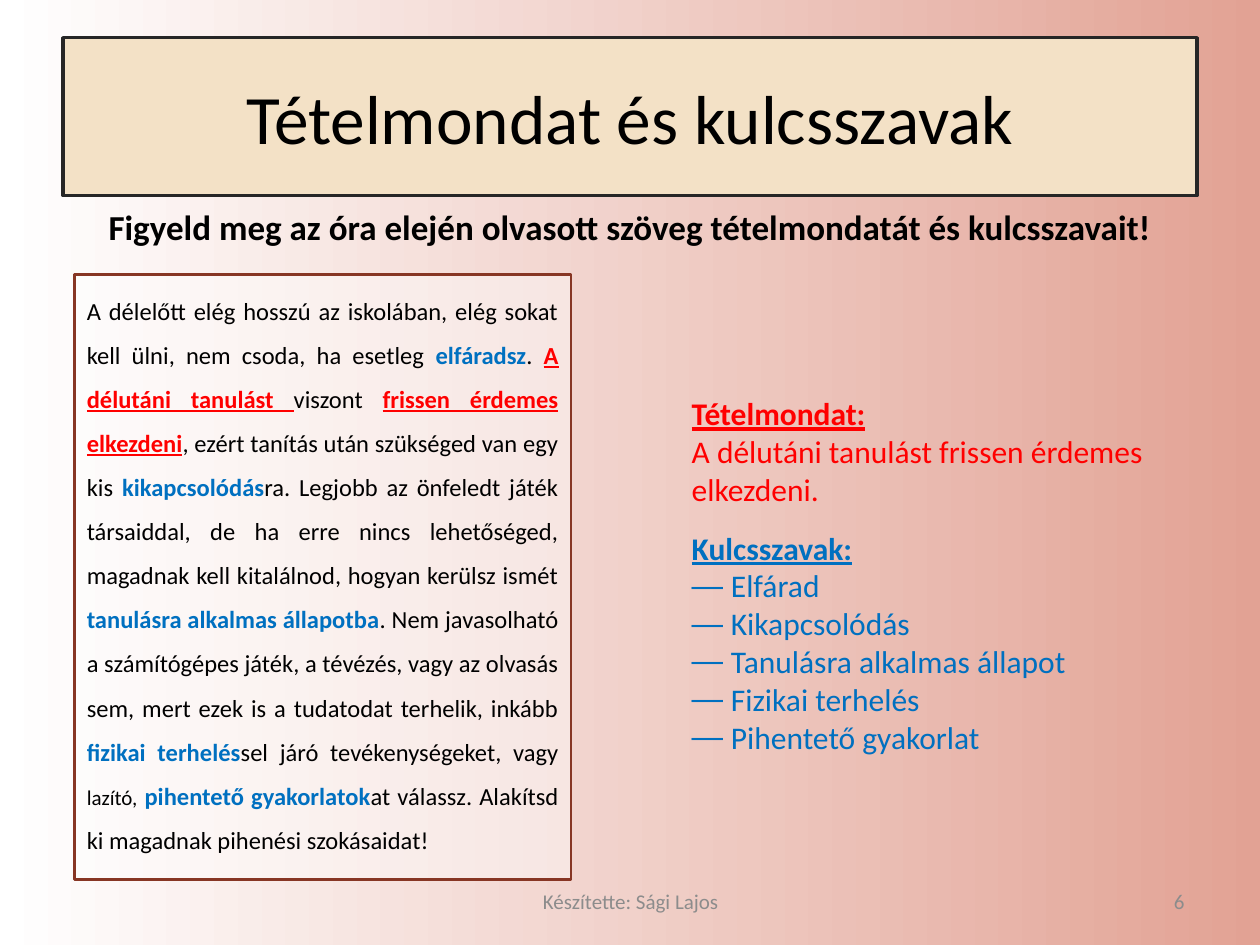
from dataclasses import dataclass

from lxml import etree
from pptx import Presentation
from pptx.dml.color import RGBColor
from pptx.enum.shapes import MSO_SHAPE
from pptx.enum.text import MSO_ANCHOR, MSO_AUTO_SIZE, PP_ALIGN
from pptx.oxml.ns import qn
from pptx.util import Cm, Pt

LEFT, MID, RIGHT, FULL = PP_ALIGN.LEFT, PP_ALIGN.CENTER, PP_ALIGN.RIGHT, PP_ALIGN.JUSTIFY
TOP, CENTRE = MSO_ANCHOR.TOP, MSO_ANCHOR.MIDDLE
FIXED = MSO_AUTO_SIZE.NONE
RECT = MSO_SHAPE.RECTANGLE


@dataclass(frozen=True)
class Theme:
    font: str = "Calibri"
    black: str = "000000"
    white: str = "FFFFFF"
    rose: str = "E2A294"
    sand: str = "F3E1C6"
    dark: str = "262626"
    brown: str = "873624"
    red: str = "FF0000"
    blue: str = "0070C0"
    grey: str = "8C8C8C"
    title: float = 39.6
    lead: int = 20
    list: int = 18
    text: int = 14
    small: int = 12


T = Theme()


def frame(shape, box, anchor=TOP):
    """Move the shape to box (cm) and return its first paragraph."""
    shape.left, shape.top, shape.width, shape.height = map(Cm, box)
    body = shape.text_frame
    body.word_wrap, body.auto_size, body.vertical_anchor = True, FIXED, anchor
    return body.paragraphs[0]


def write(para, text, size=T.text, color=T.black, bold=False, line=False, align=LEFT):
    para.alignment = align
    run = para.add_run()
    run.text = text
    font = run.font
    font.name, font.size, font.bold, font.underline = T.font, Pt(size), bold, line
    font.color.rgb = RGBColor.from_string(color)


deck = Presentation()
deck.slide_width, deck.slide_height = Cm(25.4), Cm(19.05)
slide = deck.slides.add_slide(deck.slide_layouts[1])
shapes = slide.shapes

# Background
back = slide.background.fill
back.gradient()
back.gradient_angle = 0
for stop, tone in zip(back.gradient_stops, (T.white, T.rose)):
    stop.color.rgb = RGBColor.from_string(tone)

# Title
title = shapes.title
title.fill.solid()
title.fill.fore_color.rgb = RGBColor.from_string(T.sand)
title.line.color.rgb = RGBColor.from_string(T.dark)
title.line.width = Pt(2)
para = frame(title, (1.27, 0.76, 22.86, 3.18), CENTRE)
write(para, "Tételmondat és kulcsszavak", size=T.title, align=MID)

# Task and footer
labels = [
    ("Figyeld meg az óra elején olvasott szöveg tételmondatát és kulcsszavait!",
     (1.9, 4.01, 21.59, 1.12), TOP, dict(size=T.lead, bold=True, align=MID)),
    ("Készítette: Sági Lajos", (8.69, 17.65, 8.05, 1.02), CENTRE,
     dict(size=T.small, color=T.grey, align=MID)),
    ("6", (18.21, 17.65, 5.92, 1.02), CENTRE,
     dict(size=T.small, color=T.grey, align=RIGHT)),
]
for text, box, anchor, style in labels:
    para = frame(shapes.add_textbox(0, 0, 0, 0), box, anchor)
    write(para, text, **style)

# Passage with its topic sentence and key words marked
panel = shapes.add_shape(RECT, 0, 0, 0, 0)
panel.shadow.inherit = False
panel.fill.solid()
panel.fill.fore_color.rgb = RGBColor.from_string(T.white)
tint = panel.fill._xPr.find(qn("a:solidFill"))[0]
etree.SubElement(tint, qn("a:alpha")).set("val", "40000")
panel.line.color.rgb = RGBColor.from_string(T.brown)
panel.line.width = Pt(1.5)

plain = {}
topic = dict(color=T.red, bold=True, line=True)
key = dict(color=T.blue, bold=True)
small = dict(size=T.small)
parts = [
    ("A délelőtt elég hosszú az iskolában, elég sokat kell ülni, nem csoda, "
     "ha esetleg ", plain),
    ("elfáradsz", key),
    (". ", plain),
    ("A délutáni tanulást ", topic),
    ("viszont ", plain),
    ("frissen érdemes elkezdeni", topic),
    (", ezért tanítás után szükséged van egy kis ", plain),
    ("kikapcsolódás", key),
    ("ra. Legjobb az önfeledt játék társaiddal, de ha erre nincs lehetőséged, "
     "magadnak kell kitalálnod, hogyan kerülsz ismét ", plain),
    ("tanulásra alkalmas állapotba", key),
    (". Nem javasolható a számítógépes játék, a tévézés, vagy az olvasás sem, "
     "mert ezek is a tudatodat terhelik, inkább ", plain),
    ("fizikai terhelés", key),
    ("sel járó tevékenységeket, vagy ", plain),
    ("lazító,", small),
    (" pihentető gyakorlatok", key),
    ("at válassz. Alakítsd ki magadnak pihenési szokásaidat!", plain),
]
para = frame(panel, (1.5, 5.54, 10.01, 12.19))
para.line_spacing = 1.5
for text, style in parts:
    write(para, text, align=FULL, **style)

# Answers: text, style, space after, dash
words = ["Elfárad", "Kikapcsolódás", "Tanulásra alkalmas állapot",
         "Fizikai terhelés", "Pihentető gyakorlat"]
rows = [
    ("Tételmondat:", topic, 0, False),
    ("A délutáni tanulást frissen érdemes elkezdeni.", dict(color=T.red), 12, False),
    ("Kulcsszavak:", dict(key, line=True), 0, False),
    *((word, dict(color=T.blue), 0, True) for word in words),
]
notes = slide.placeholders[1]
para = frame(notes, (13.69, 7.82, 10.39, 7.62))
for text, style, gap, dash in rows:
    if para is None:
        para = notes.text_frame.add_paragraph()
    write(para, text, size=T.list, **style)
    para.space_before, para.space_after = Pt(0), Pt(gap)
    props = para._p.get_or_add_pPr()
    dent = Cm(0.79) if dash else 0
    props.set("marL", str(dent))
    props.set("indent", str(-dent))
    if dash:
        etree.SubElement(props, qn("a:buChar")).set("char", "—")
    else:
        etree.SubElement(props, qn("a:buNone"))
    para = None

deck.save("out.pptx")
